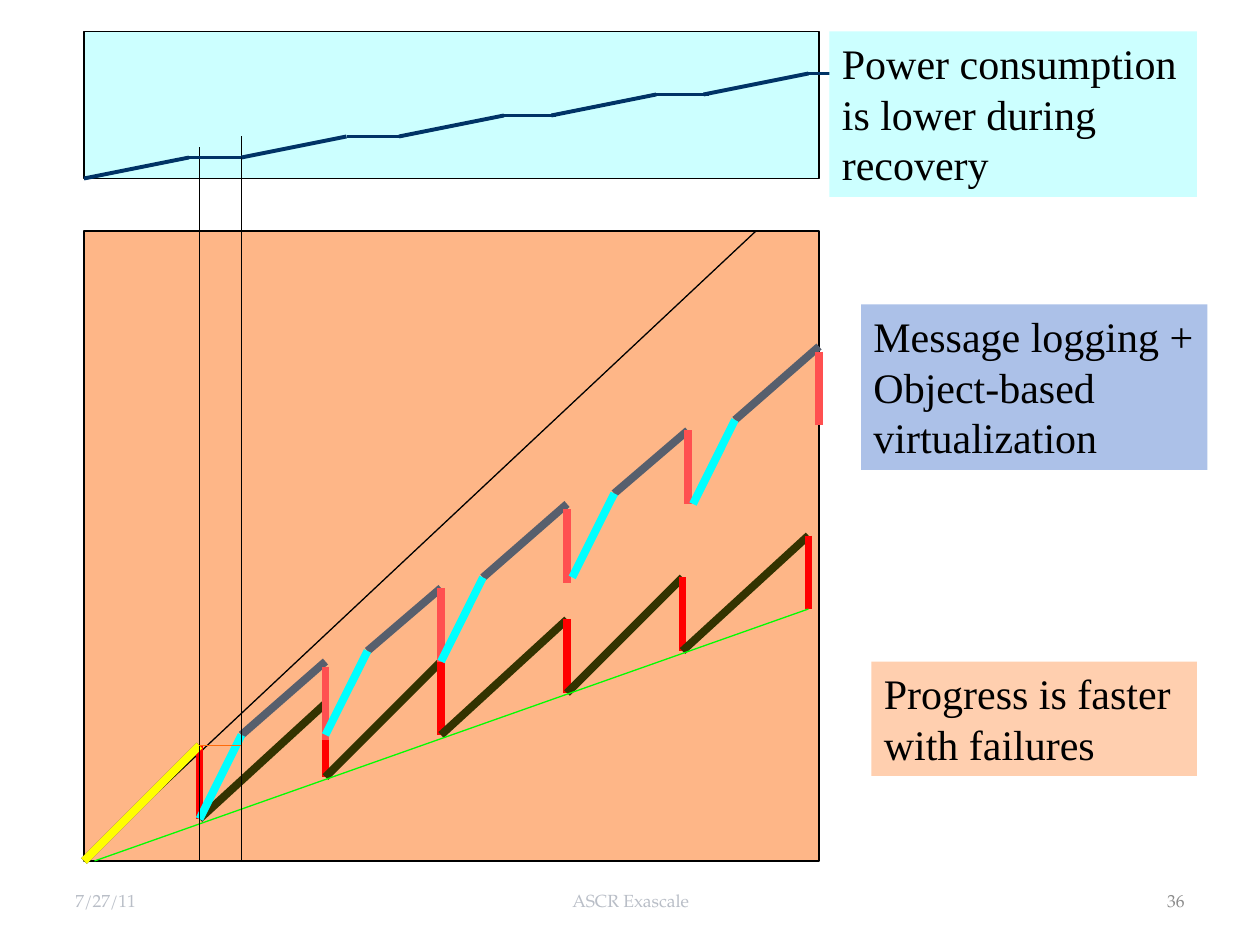
from dataclasses import dataclass

from lxml import etree
from pptx import Presentation
from pptx.dml.color import RGBColor
from pptx.enum.shapes import MSO_CONNECTOR, MSO_SHAPE
from pptx.enum.text import MSO_ANCHOR, PP_ALIGN
from pptx.oxml.ns import qn
from pptx.util import Inches, Pt

STRAIGHT = MSO_CONNECTOR.STRAIGHT
RECTANGLE = MSO_SHAPE.RECTANGLE
TOP, MIDDLE = MSO_ANCHOR.TOP, MSO_ANCHOR.MIDDLE
LEFT, CENTER, RIGHT = PP_ALIGN.LEFT, PP_ALIGN.CENTER, PP_ALIGN.RIGHT
BLANK_LAYOUT = 6
CELLS_PER_INCH = 12  # the diagram sits on a grid of twelfths of an inch


@dataclass(frozen=True)
class Theme:
    body_font: str = "Times New Roman"
    footer_font: str = "TeX Gyre Pagella"
    body_size: float = 24
    footer_size: float = 10
    thin: float = 0.75
    medium: float = 2.25
    thick: float = 4.5
    ink: str = "000000"
    progress_panel: str = "FEB687"
    power_panel: str = "CCFFFF"
    logging_note: str = "ACC1E8"
    progress_note: str = "FFCFAF"
    checkpoint_climb: str = "333300"
    checkpoint_fall: str = "FF0000"
    checkpoint_trend: str = "00FF00"
    first_climb: str = "FFFF00"
    recovery: str = "00FFFF"
    logging_climb: str = "575F6D"
    logging_fall: str = "FF5050"
    power: str = "003366"
    recovery_span: str = "FF6B0A"
    footer: str = "B9BEC7"
    page_number: str = "8C8C8C"


THEME = Theme()

# Main points, in grid cells (column, row)
ORIGIN = (8, 82)
FAILURES = (19, 31, 42, 54, 65, 77)
FIRST_PEAK = (FAILURES[0], 71)
ROLLBACK = 7
RECOVERED = 23


def cells(count):
    return Inches(count / CELLS_PER_INCH)


def color(value):
    return RGBColor.from_string(value)


def add_line(slide, start, end, stroke, width):
    line = slide.shapes.add_connector(
        STRAIGHT, *(cells(v) for v in (*start, *end)))
    line.line.color.rgb = color(stroke)
    line.line.width = Pt(width)
    etree.SubElement(line._element.spPr, qn("a:effectLst"))


def add_panel(slide, left, top, width, height, fill, outline=None):
    panel = slide.shapes.add_shape(
        RECTANGLE, *(cells(v) for v in (left, top, width, height)))
    panel.shadow.inherit = False
    panel.fill.solid()
    panel.fill.fore_color.rgb = color(fill)
    if outline:
        panel.line.color.rgb = color(outline)
        panel.line.width = Pt(THEME.thin)
    else:
        panel.line.fill.background()
    return panel


def write(shape, text, *, font, size, ink, align=LEFT, anchor=TOP):
    frame = shape.text_frame
    frame.word_wrap = True
    frame.vertical_anchor = anchor
    paragraph = frame.paragraphs[0]
    paragraph.alignment = align
    run = paragraph.add_run()
    run.text = text
    run.font.name = font
    run.font.size = Pt(size)
    run.font.color.rgb = color(ink)


def add_note(slide, text, left, top, width, height, fill):
    note = add_panel(slide, left, top, width, height, fill)
    write(note, text, font=THEME.body_font, size=THEME.body_size,
          ink=THEME.ink)


def add_footer(slide, text, left, width, align, ink=THEME.footer):
    box = slide.shapes.add_textbox(
        Inches(left), Inches(6.95), Inches(width), Inches(0.4))
    write(box, text, font=THEME.footer_font, size=THEME.footer_size,
          ink=ink, align=align, anchor=MIDDLE)


def draw_checkpoint_progress(slide):
    """Every failure rolls back; each peak is 4 rows above the last."""
    valley = ORIGIN
    for index, column in enumerate(FAILURES):
        peak = (column, FIRST_PEAK[1] - 4 * index)
        add_line(slide, valley, peak, THEME.checkpoint_climb, THEME.thick)
        valley = (column, peak[1] + ROLLBACK)
        add_line(slide, peak, valley, THEME.checkpoint_fall, THEME.thick)
    add_line(slide, (9, ORIGIN[1]), valley, THEME.checkpoint_trend, THEME.thin)


def draw_logging_progress(slide):
    """Steep recovery, normal climb, then the next failure."""
    starts = ((19, 78), (31, 70), (42, 63), (54.5, 55), (66, 48))
    peaks = ((31, 63), (42, 56), (54, 48), (65.5, 41), (78, 33))
    for index, ((column, row), peak) in enumerate(zip(starts, peaks)):
        knee = (column + 4, row - 8)
        fall_top = peak[1] + (0.5 if index % 2 == 0 else 0)
        add_line(slide, knee, peak, THEME.logging_climb, THEME.thick)
        add_line(slide, (peak[0], fall_top), (peak[0], fall_top + ROLLBACK),
                 THEME.logging_fall, THEME.thick)
        add_line(slide, (column, row), knee, THEME.recovery, THEME.thick)


def draw_power(slide):
    """Power rises while computing and stays flat during recovery."""
    for index, column in enumerate((8, 23, 38, 52.5, 67)):
        row = 17 - 2 * index
        plateau = (column + 10, row - 2)
        add_line(slide, (column, row), plateau, THEME.power, THEME.medium)
        add_line(slide, plateau, (plateau[0] + 5, plateau[1]),
                 THEME.power, THEME.medium)


def main():
    prs = Presentation()
    prs.slide_width, prs.slide_height = Inches(10), Inches(7.5)
    slide = prs.slides.add_slide(prs.slide_layouts[BLANK_LAYOUT])

    # Progress chart, with failure-free progress as the thin diagonal
    add_panel(slide, 8, 22, 70, 60, THEME.progress_panel, THEME.ink)
    add_line(slide, ORIGIN, (72, 22), THEME.ink, THEME.thin)
    draw_checkpoint_progress(slide)
    add_panel(slide, 8, 3, 70, 14, THEME.power_panel, THEME.ink)
    add_line(slide, ORIGIN, FIRST_PEAK, THEME.first_climb, THEME.thick)
    draw_logging_progress(slide)

    # Guides that mark the first recovery in both charts
    for column, top in ((FAILURES[0], 14), (RECOVERED, 13)):
        add_line(slide, (column, ORIGIN[1]), (column, top),
                 THEME.ink, THEME.thin)
    draw_power(slide)
    add_line(slide, FIRST_PEAK, (RECOVERED, FIRST_PEAK[1]),
             THEME.recovery_span, 1)

    # Notes beside the charts
    add_note(slide, "Message logging + Object-based virtualization",
             82, 29, 33, 15.75, THEME.logging_note)
    add_note(slide, "Power consumption is lower during recovery",
             79, 3, 35, 15.75, THEME.power_panel)
    add_note(slide, "Progress is faster with failures",
             83, 63, 31, 10.9, THEME.progress_note)

    # Footer
    add_footer(slide, "7/27/11", 0.5, 2.33, LEFT)
    add_footer(slide, "ASCR Exascale", 3.42, 3.17, CENTER)
    add_footer(slide, "36", 7.17, 2.33, RIGHT, THEME.page_number)

    prs.save("out.pptx")


if __name__ == "__main__":
    main()
